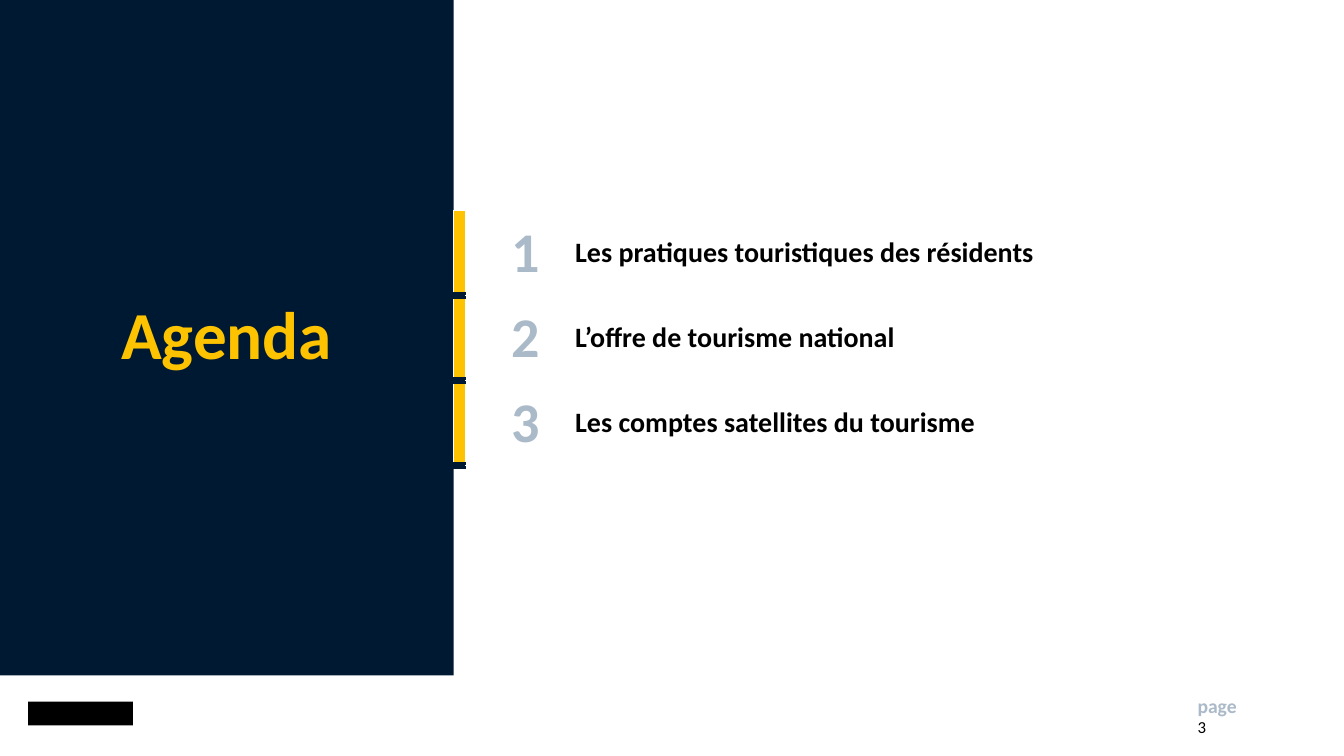
from lxml import etree
from pptx import Presentation
from pptx.dml.color import RGBColor
from pptx.enum.shapes import MSO_SHAPE
from pptx.enum.text import MSO_ANCHOR, MSO_AUTO_SIZE, PP_ALIGN
from pptx.oxml.ns import qn
from pptx.util import Cm, Pt

RECTANGLE = MSO_SHAPE.RECTANGLE
MIDDLE = MSO_ANCHOR.MIDDLE
CENTER = PP_ALIGN.CENTER
LEFT = PP_ALIGN.LEFT
NO_AUTOFIT = MSO_AUTO_SIZE.NONE

NAVY = RGBColor(0x00, 0x19, 0x32)
YELLOW = RGBColor(0xFD, 0xC3, 0x00)
GREY = RGBColor(0xAB, 0xBA, 0xC9)
BLACK = RGBColor(0x00, 0x00, 0x00)
WHITE = RGBColor(0xFF, 0xFF, 0xFF)

FONT = "Calibri"
TITLE_ONLY = 5
TOPICS = [
    "Les pratiques touristiques des résidents",
    "L’offre de tourisme national",
    "Les comptes satellites du tourisme",
]
COLUMN_WIDTHS = [Cm(0.3), Cm(2.51), Cm(17.58)]
ROW_HEIGHT = Cm(2.14)


def fill_solid(target, color):
    target.fill.solid()
    target.fill.fore_color.rgb = color


def write(frame, text, size, color, bold=True, align=LEFT):
    frame.text = text
    paragraph = frame.paragraphs[0]
    paragraph.alignment = align
    font = paragraph.font
    font.name, font.size, font.bold = FONT, Pt(size), bold
    font.color.rgb = color
    return paragraph


def clear_margins(frame):
    frame.margin_left = frame.margin_right = 0
    frame.margin_top = frame.margin_bottom = 0


def add_title_panel(slide):
    panel = slide.shapes.title
    panel.left, panel.top, panel.width, panel.height = 0, 0, Cm(11.43), Cm(17.02)
    fill_solid(panel, NAVY)
    frame = panel.text_frame
    clear_margins(frame)
    frame.auto_size = NO_AUTOFIT
    frame.vertical_anchor = MIDDLE
    write(frame, "Agenda", 48, YELLOW, align=CENTER).line_spacing = 0.9


def add_border(cell, side):
    """Draw a navy line on one side of a cell: lnT or lnB."""
    line = etree.Element(qn("a:" + side), w=str(Pt(6)))
    fill = etree.SubElement(line, qn("a:solidFill"))
    etree.SubElement(fill, qn("a:srgbClr"), val=str(NAVY))
    cell._tc.get_or_add_tcPr().insert(0, line)


def add_agenda(slide):
    frame = slide.shapes.add_table(
        len(TOPICS), len(COLUMN_WIDTHS), Cm(11.43), Cm(5.31),
        sum(COLUMN_WIDTHS), ROW_HEIGHT * len(TOPICS))
    agenda = frame.table
    agenda.first_row = agenda.horz_banding = False
    for column, width in zip(agenda.columns, COLUMN_WIDTHS):
        column.width = width

    for index, topic in enumerate(TOPICS):
        agenda.rows[index].height = ROW_HEIGHT
        marker, number, label = agenda.rows[index].cells

        clear_margins(marker)
        fill_solid(marker, YELLOW)
        add_border(marker, "lnB")
        if index:
            add_border(marker, "lnT")

        for cell in (number, label):
            fill_solid(cell, WHITE)
            cell.vertical_anchor = MIDDLE
        number.margin_left = Cm(0.76)
        write(number.text_frame, str(index + 1), 40, GREY, align=CENTER)
        write(label.text_frame, topic, 20, BLACK)


def add_footer_text(slide, text, top, height, size, color, bold):
    box = slide.shapes.add_textbox(Cm(30.18), top, Cm(1.7), height)
    frame = box.text_frame
    frame.word_wrap = True
    clear_margins(frame)
    write(frame, text, size, color, bold)


def add_logo_block(slide):
    block = slide.shapes.add_shape(RECTANGLE, Cm(0.71), Cm(17.68), Cm(2.64), Cm(0.6))
    block.shadow.inherit = False
    fill_solid(block, BLACK)
    block.line.fill.background()


def main():
    deck = Presentation()
    deck.slide_width, deck.slide_height = Cm(33.87), Cm(19.05)
    slide = deck.slides.add_slide(deck.slide_layouts[TITLE_ONLY])

    # Footer
    add_footer_text(slide, "3", Cm(18.06), Cm(0.71), 12, BLACK, False)
    add_footer_text(slide, "page", Cm(17.48), Cm(0.51), 14, GREY, True)
    add_logo_block(slide)

    # Title panel and numbered topics
    add_title_panel(slide)
    add_agenda(slide)

    deck.save("out.pptx")


if __name__ == "__main__":
    main()
